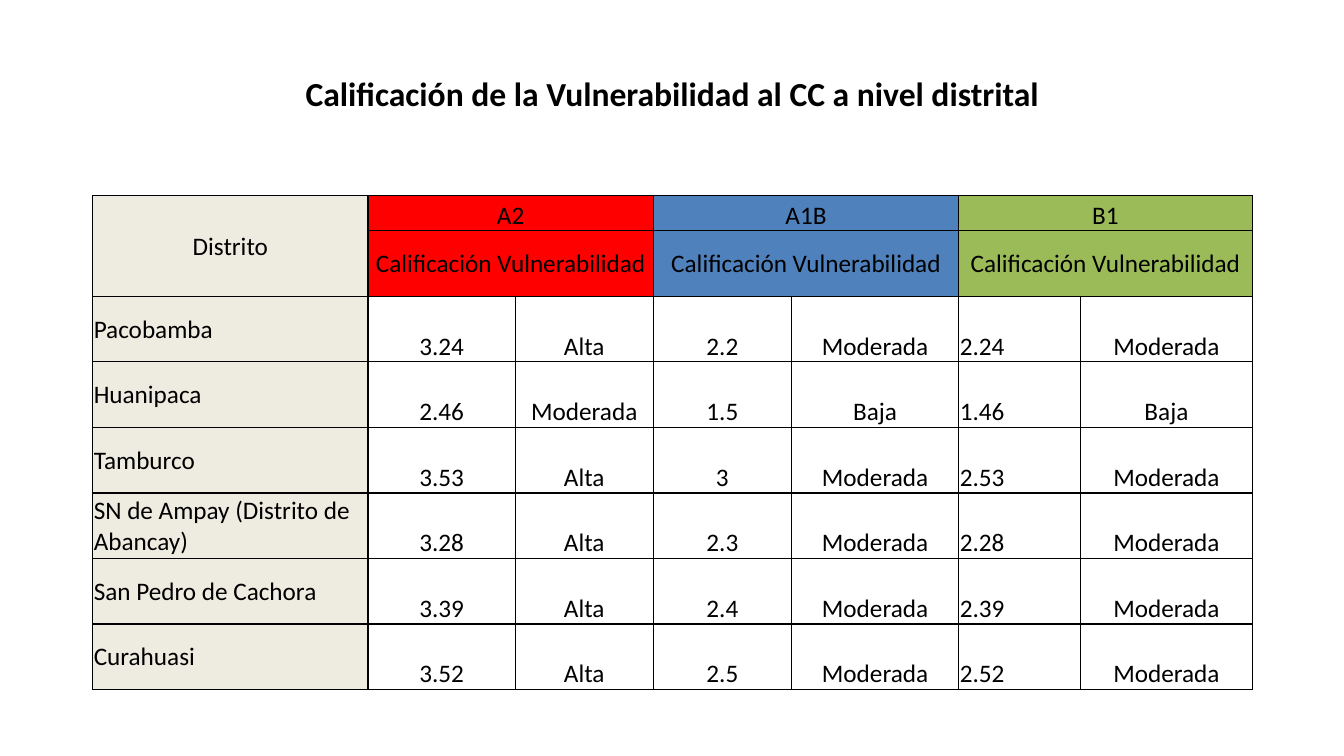
from dataclasses import dataclass

from lxml.etree import SubElement
from pptx import Presentation
from pptx.dml.color import RGBColor
from pptx.enum.text import MSO_ANCHOR, PP_ALIGN
from pptx.oxml.ns import qn
from pptx.util import Inches, Pt


@dataclass(frozen=True)
class Theme:
    font: str = "Calibri"
    ink: str = "000000"
    sand: str = "EEECE1"
    red: str = "FF0000"
    blue: str = "4F81BD"
    green: str = "9BBB59"
    title: int = 24
    body: int = 18
    line: int = 1


THEME = Theme()
WIDTHS = [2.73, 1.46, 1.37, 1.37, 1.66, 1.21, 1.7]
HEIGHTS = [0.35] + [0.65] * 7
GROUPS = [("A2", THEME.red), ("A1B", THEME.blue), ("B1", THEME.green)]
ROWS = [
    ("Pacobamba", "3.24", "Alta", "2.2", "Moderada", "2.24", "Moderada"),
    ("Huanipaca", "2.46", "Moderada", "1.5", "Baja", "1.46", "Baja"),
    ("Tamburco", "3.53", "Alta", "3", "Moderada", "2.53", "Moderada"),
    ("SN de Ampay (Distrito de Abancay)", "3.28", "Alta", "2.3", "Moderada", "2.28", "Moderada"),
    ("San Pedro de Cachora", "3.39", "Alta", "2.4", "Moderada", "2.39", "Moderada"),
    ("Curahuasi", "3.52", "Alta", "2.5", "Moderada", "2.52", "Moderada"),
]


def set_text(frame, text, size, align, bold=False):
    frame.text = text
    para = frame.paragraphs[0]
    para.alignment = align
    for run in para.runs:
        run.font.name = THEME.font
        run.font.size = Pt(size)
        run.font.bold = bold
        run.font.color.rgb = RGBColor.from_string(THEME.ink)


def add_title(slide, text):
    box = slide.shapes.add_textbox(Inches(0.67), Inches(0.3), Inches(12), Inches(1.25))
    frame = box.text_frame
    frame.word_wrap = True
    frame.vertical_anchor = MSO_ANCHOR.MIDDLE
    set_text(frame, text, THEME.title, PP_ALIGN.CENTER, bold=True)


def frame_cell(cell):
    cell.margin_left = cell.margin_right = cell.margin_top = Inches(0.01)
    cell.margin_bottom = 0
    props = cell._tc.get_or_add_tcPr()
    for side in ("lnL", "lnR", "lnT", "lnB"):
        line = SubElement(props, qn(f"a:{side}"), w=str(Pt(THEME.line)))
        fill = SubElement(line, qn("a:solidFill"))
        SubElement(fill, qn("a:srgbClr"), val=THEME.ink)
    cell.fill.background()


def fill_cell(cell, text, anchor, align=PP_ALIGN.CENTER, color=None):
    set_text(cell.text_frame, text, THEME.body, align)
    cell.vertical_anchor = anchor
    if color:
        cell.fill.solid()
        cell.fill.fore_color.rgb = RGBColor.from_string(color)


def add_grid(slide):
    shape = slide.shapes.add_table(
        len(HEIGHTS), len(WIDTHS), Inches(0.92), Inches(1.94),
        Inches(sum(WIDTHS)), Inches(sum(HEIGHTS)),
    )
    table = shape.table
    table.first_row = table.horz_banding = False
    for column, width in zip(table.columns, WIDTHS):
        column.width = Inches(width)
    for row, height in zip(table.rows, HEIGHTS):
        row.height = Inches(height)
    for cell in table.iter_cells():
        frame_cell(cell)
    return table


def add_heads(table):
    corner = table.cell(0, 0)
    corner.merge(table.cell(1, 0))
    fill_cell(corner, "Distrito", MSO_ANCHOR.MIDDLE, color=THEME.sand)
    for index, (name, color) in enumerate(GROUPS):
        left = 1 + 2 * index
        heads = [(name, MSO_ANCHOR.BOTTOM), ("Calificación Vulnerabilidad", MSO_ANCHOR.MIDDLE)]
        for row, (text, anchor) in enumerate(heads):
            cell = table.cell(row, left)
            cell.merge(table.cell(row, left + 1))
            fill_cell(cell, text, anchor, color=color)


def add_rows(table):
    for row, (name, *values) in enumerate(ROWS, 2):
        fill_cell(table.cell(row, 0), name, MSO_ANCHOR.MIDDLE, PP_ALIGN.LEFT, THEME.sand)
        for col, text in enumerate(values, 1):
            align = PP_ALIGN.LEFT if col == 5 else PP_ALIGN.CENTER
            fill_cell(table.cell(row, col), text, MSO_ANCHOR.BOTTOM, align)


def main():
    deck = Presentation()
    deck.slide_width = Inches(13.33)
    deck.slide_height = Inches(7.5)
    slide = deck.slides.add_slide(deck.slide_layouts[6])
    table = add_grid(slide)
    add_heads(table)
    add_rows(table)
    add_title(slide, "Calificación de la Vulnerabilidad al CC a nivel distrital")
    deck.save("out.pptx")


if __name__ == "__main__":
    main()
